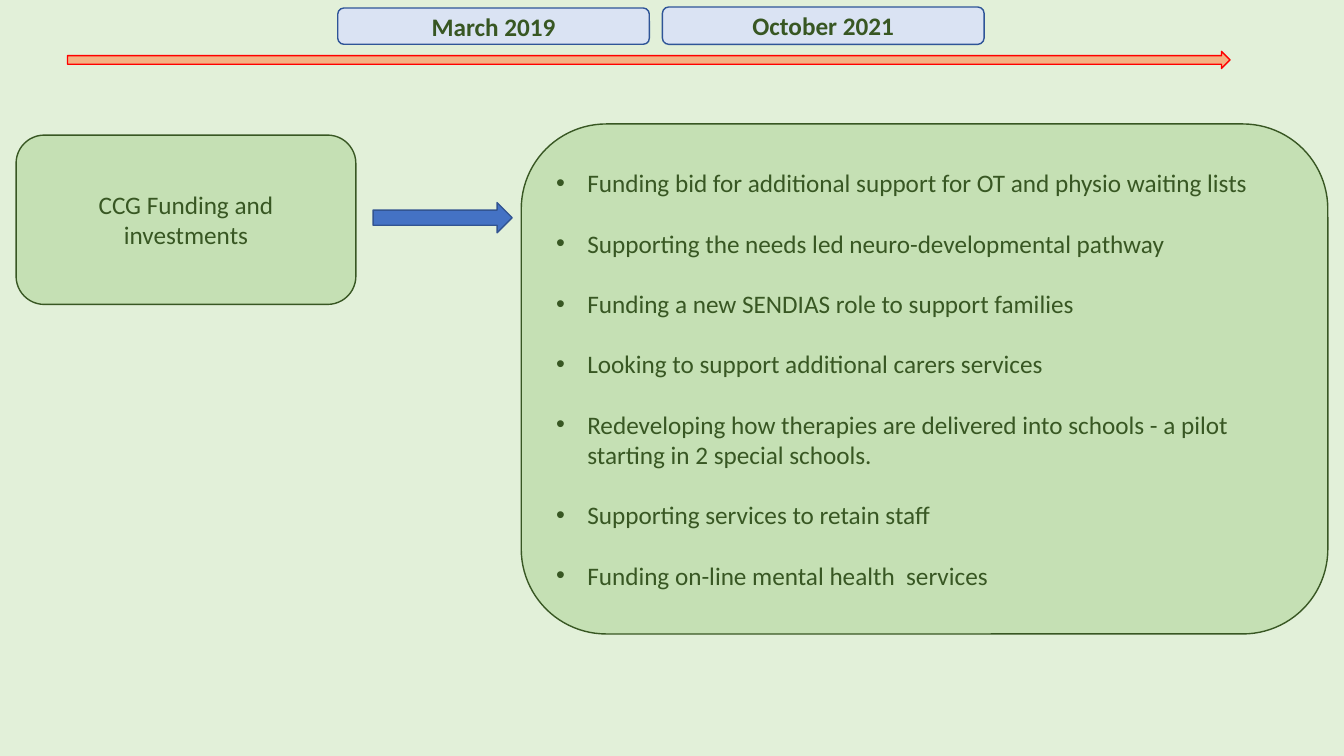
"""Build the funding timeline slide."""
from dataclasses import dataclass
from typing import Optional

from lxml import etree
from pptx import Presentation
from pptx import util as u
from pptx.dml.color import RGBColor
from pptx.enum import shapes, text
from pptx.oxml.ns import qn


@dataclass(frozen=True)
class Theme:
    background: str = "E2F0D9"
    panel: str = "C5E0B4"
    dark_green: str = "385723"
    date: str = "DAE3F3"
    date_line: str = "2F5597"
    timeline: str = "F4B183"
    timeline_line: str = "FF0000"
    arrow: str = "4472C4"
    arrow_line: str = "325491"
    font: str = "Calibri"
    size: float = 18
    item_gap: float = 21.5
    bullet_indent: float = 0.31
    line_width: float = 1


@dataclass(frozen=True)
class Block:
    left: float
    top: float
    width: float
    height: float
    fill: str
    line: str
    lines: tuple[str, ...] = ()
    bold: bool = False
    bullet: Optional[str] = None
    kind: shapes.MSO_SHAPE = shapes.MSO_SHAPE.ROUNDED_RECTANGLE


THEME = Theme()
ARROW = shapes.MSO_SHAPE.RIGHT_ARROW

FUNDING_ITEMS = (
    "Funding bid for additional support for OT and physio waiting lists",
    "Supporting the needs led neuro-developmental pathway",
    "Funding a new SENDIAS role to support families",
    "Looking to support additional carers services",
    "Redeveloping how therapies are delivered into schools - a pilot starting in 2 special schools.",
    "Supporting services to retain staff",
    "Funding on-line mental health  services",
)

BLOCKS = (
    Block(3.35, 0.08, 3.09, 0.36, THEME.date, THEME.date_line, ("March 2019",), bold=True),
    Block(5.17, 1.23, 8, 5.06, THEME.panel, THEME.dark_green, FUNDING_ITEMS, bullet="•"),
    Block(0.67, 0.51, 11.53, 0.17, THEME.timeline, THEME.timeline_line, kind=ARROW),
    Block(6.57, 0.07, 3.19, 0.37, THEME.date, THEME.date_line, ("October 2021",), bold=True),
    Block(0.16, 1.34, 3.37, 1.68, THEME.panel, THEME.dark_green, ("CCG Funding and investments",)),
    Block(3.7, 2.01, 1.38, 0.3, THEME.arrow, THEME.arrow_line, kind=ARROW),
)


def add_bullet(paragraph, character: str) -> None:
    """Give a paragraph a hanging bullet."""
    indent = u.Inches(THEME.bullet_indent)
    properties = paragraph._p.get_or_add_pPr()
    properties.set("marL", str(indent))
    properties.set("indent", str(-indent))
    etree.SubElement(properties, qn("a:buFont"), typeface="Arial")
    etree.SubElement(properties, qn("a:buChar"), char=character)


def write_text(frame, lines: tuple[str, ...], *, bold: bool = False,
               bullet: Optional[str] = None) -> None:
    """Fill a text frame with one formatted paragraph per line."""
    frame.word_wrap = True
    frame.vertical_anchor = text.MSO_ANCHOR.MIDDLE
    for index, line in enumerate(lines):
        paragraph = frame.add_paragraph() if index else frame.paragraphs[0]
        paragraph.alignment = text.PP_ALIGN.LEFT if bullet else text.PP_ALIGN.CENTER
        if index < len(lines) - 1:
            paragraph.space_after = u.Pt(THEME.item_gap)
        if bullet:
            add_bullet(paragraph, bullet)
        run = paragraph.add_run()
        run.text = line
        run.font.name = THEME.font
        run.font.size = u.Pt(THEME.size)
        run.font.bold = bold
        run.font.color.rgb = RGBColor.from_string(THEME.dark_green)


def draw_block(slide, block: Block) -> None:
    """Draw one shape with its text."""
    position = map(u.Inches, (block.left, block.top, block.width, block.height))
    shape = slide.shapes.add_shape(block.kind, *position)
    shape.shadow.inherit = False
    shape.fill.solid()
    shape.fill.fore_color.rgb = RGBColor.from_string(block.fill)
    shape.line.color.rgb = RGBColor.from_string(block.line)
    shape.line.width = u.Pt(THEME.line_width)
    if block.lines:
        write_text(shape.text_frame, block.lines, bold=block.bold, bullet=block.bullet)


def main() -> None:
    """Create and save the presentation."""
    presentation = Presentation()
    presentation.slide_width = u.Inches(13.33)
    presentation.slide_height = u.Inches(7.5)
    slide = presentation.slides.add_slide(presentation.slide_layouts[6])
    slide.background.fill.solid()
    slide.background.fill.fore_color.rgb = RGBColor.from_string(THEME.background)
    for block in BLOCKS:
        draw_block(slide, block)
    presentation.save("out.pptx")


if __name__ == "__main__":
    main()
